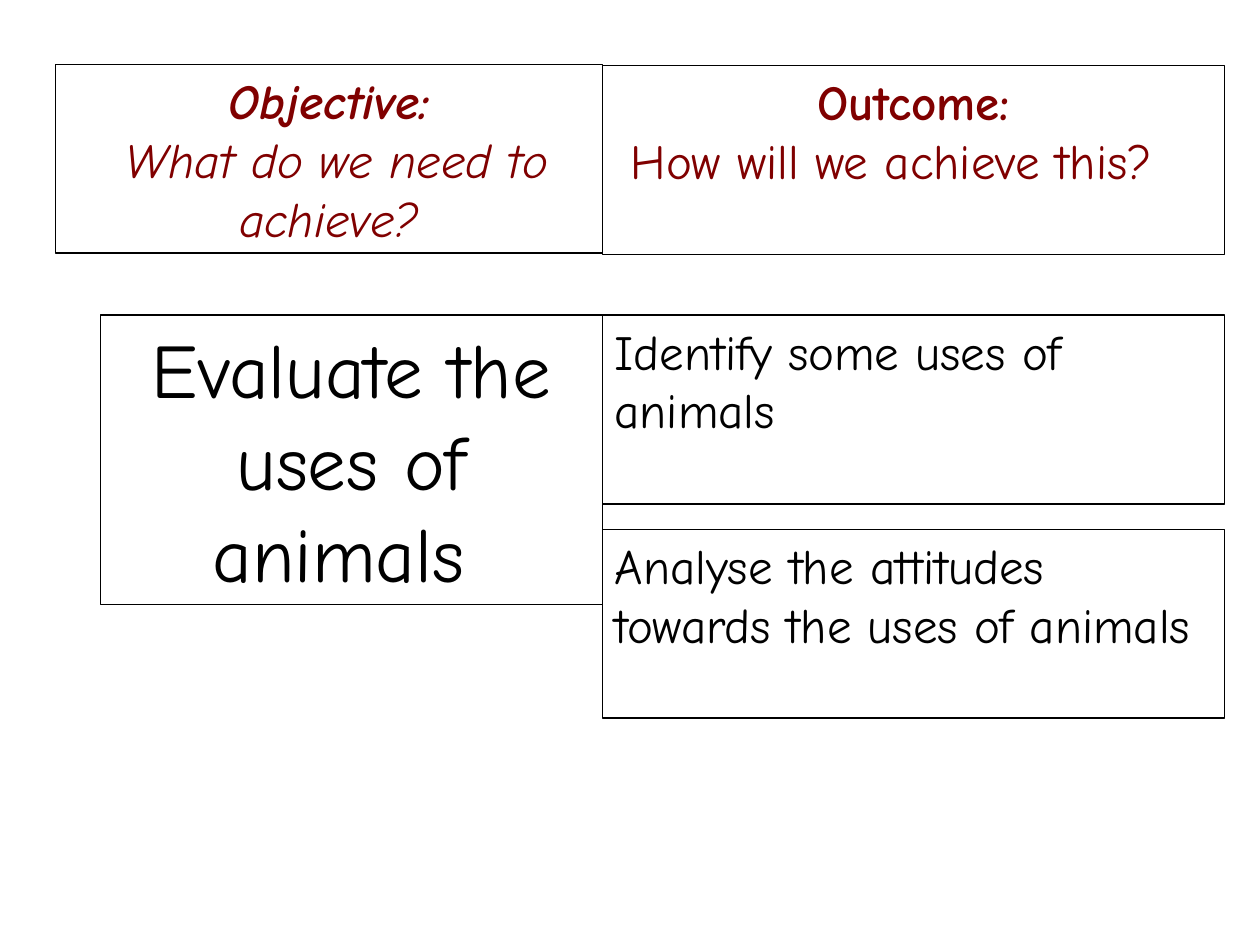
from pptx import Presentation
from pptx.dml.color import RGBColor
from pptx.enum.shapes import MSO_SHAPE
from pptx.enum.text import MSO_ANCHOR, PP_ALIGN
from pptx.util import Inches, Pt

FONT = "Comic Neue"
BLACK, WHITE, MAROON = "000000", "FFFFFF", "800000"
CENTER, LEFT = PP_ALIGN.CENTER, PP_ALIGN.LEFT

# Columns meet at MIDDLE; the outcome column ends at RIGHT
MIDDLE, RIGHT = 4.78, 9.72
OUTCOME_W, ROW_H = RIGHT - MIDDLE, 1.5

# Box: (left, top, width, height), paragraphs
# Paragraph: alignment, runs of (text, size, colour, bold, italic)
BOXES = [
    ((0.44, 0.51, MIDDLE - 0.44, ROW_H), [
        (CENTER, [("Objective:", 28, MAROON, True, True)]),
        (CENTER, [(" What do we need to achieve?", 28, MAROON, False, True)]),
    ]),
    ((0.8, 2.5, MIDDLE - 0.8, 2.3), [
        (CENTER, [("Evaluate the uses of animals ", 44, BLACK, False, False)]),
    ]),
    ((MIDDLE, 0.52, OUTCOME_W, ROW_H), [
        (CENTER, [("Outcome:", 28, MAROON, True, False)]),
        (LEFT, [(" How will we achieve this?", 28, MAROON, False, False)]),
    ]),
    ((MIDDLE, 2.5, OUTCOME_W, ROW_H), [
        (LEFT, [("Identify some uses of animals", 28, BLACK, False, False)]),
    ]),
    ((MIDDLE, 4.2, OUTCOME_W, ROW_H), [
        (LEFT, [("Analyse the attitudes towards the uses of animals",
                 28, BLACK, False, False)]),
    ]),
]


def color(hex_string):
    return RGBColor.from_string(hex_string)


def add_box(s, place, paragraphs):
    sp = s.shapes.add_shape(MSO_SHAPE.RECTANGLE, *map(Inches, place))
    sp.shadow.inherit = False
    sp.fill.solid()
    sp.fill.fore_color.rgb = color(WHITE)
    sp.line.color.rgb = color(BLACK)
    sp.line.width = Pt(0.75)
    tf = sp.text_frame
    tf.word_wrap = True
    tf.vertical_anchor = MSO_ANCHOR.TOP
    for i, (align, runs) in enumerate(paragraphs):
        p = tf.add_paragraph() if i else tf.paragraphs[0]
        p.alignment = align
        for text, size, hex_string, bold, italic in runs:
            r = p.add_run()
            r.text = text
            r.font.name, r.font.size = FONT, Pt(size)
            r.font.bold, r.font.italic = bold, italic
            r.font.color.rgb = color(hex_string)


# Slide
prs = Presentation()
prs.slide_width, prs.slide_height = Inches(10), Inches(7.5)
s = prs.slides.add_slide(prs.slide_layouts[6])
for place, paragraphs in BOXES:
    add_box(s, place, paragraphs)
prs.save("out.pptx")
